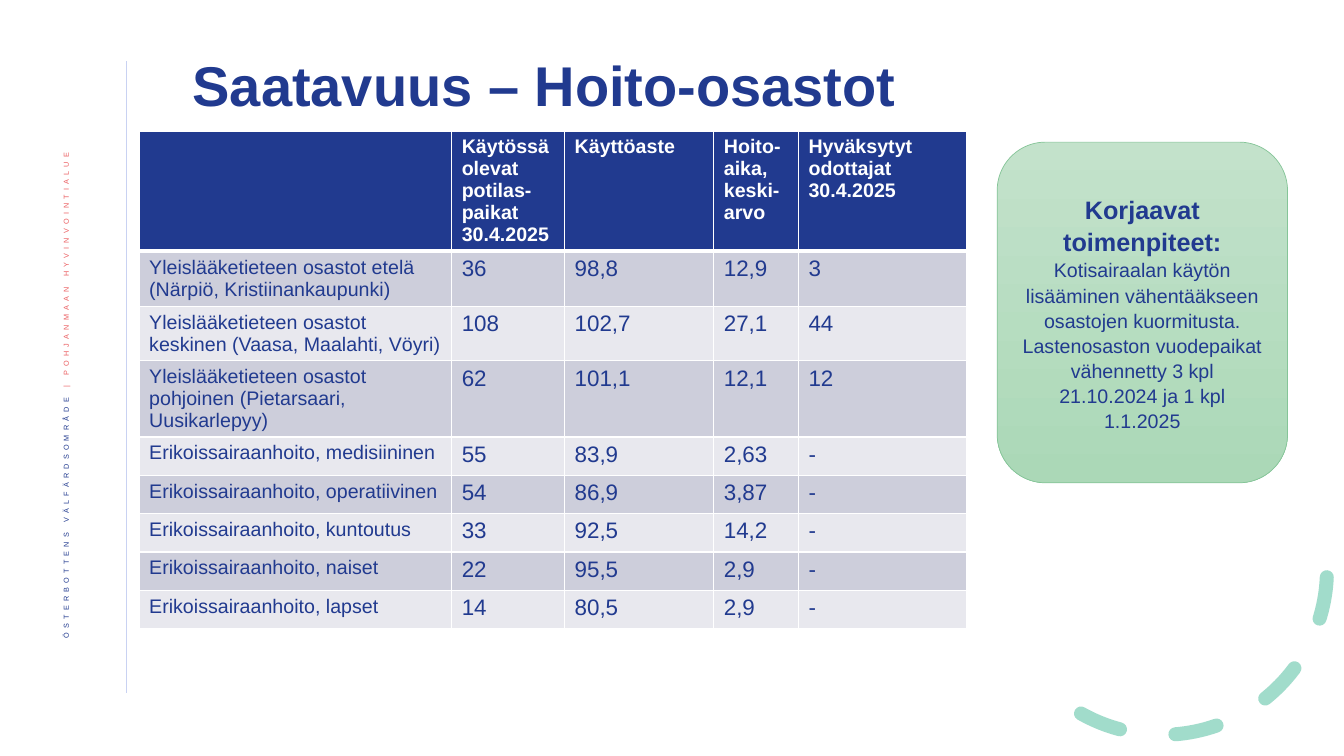
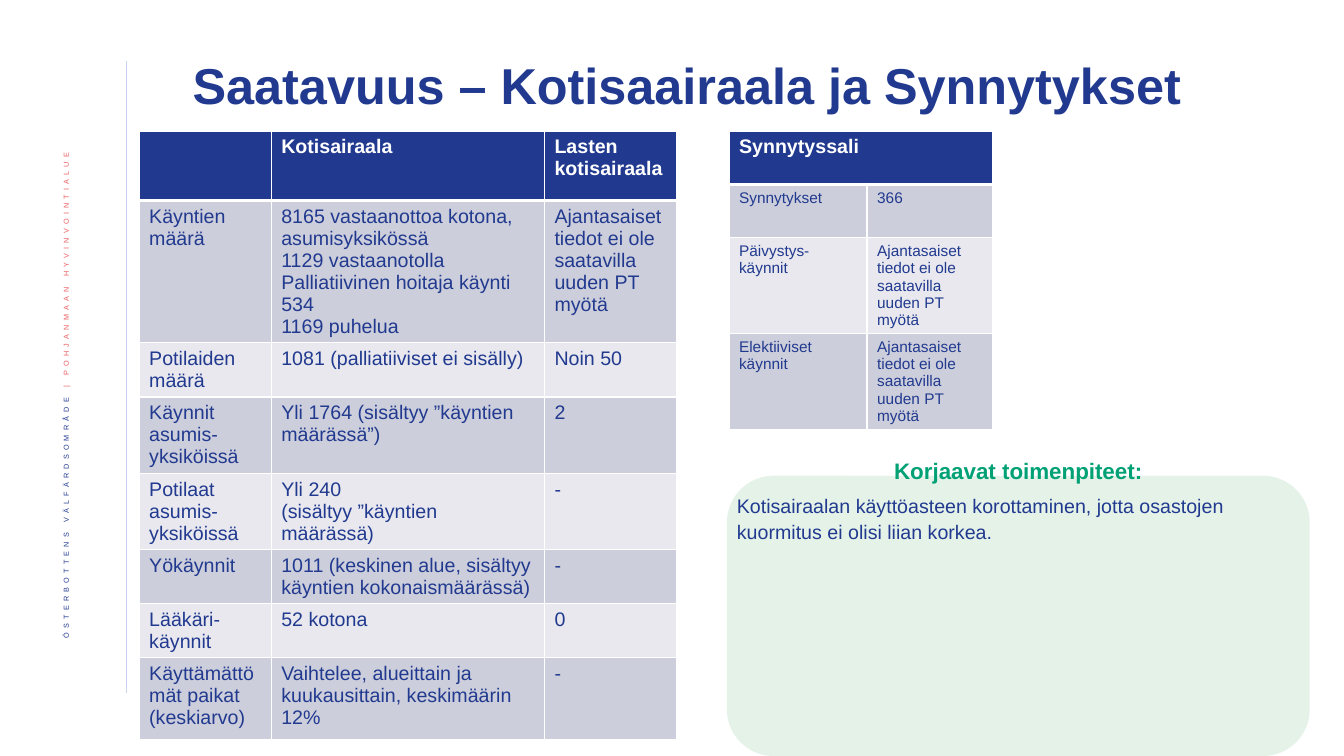
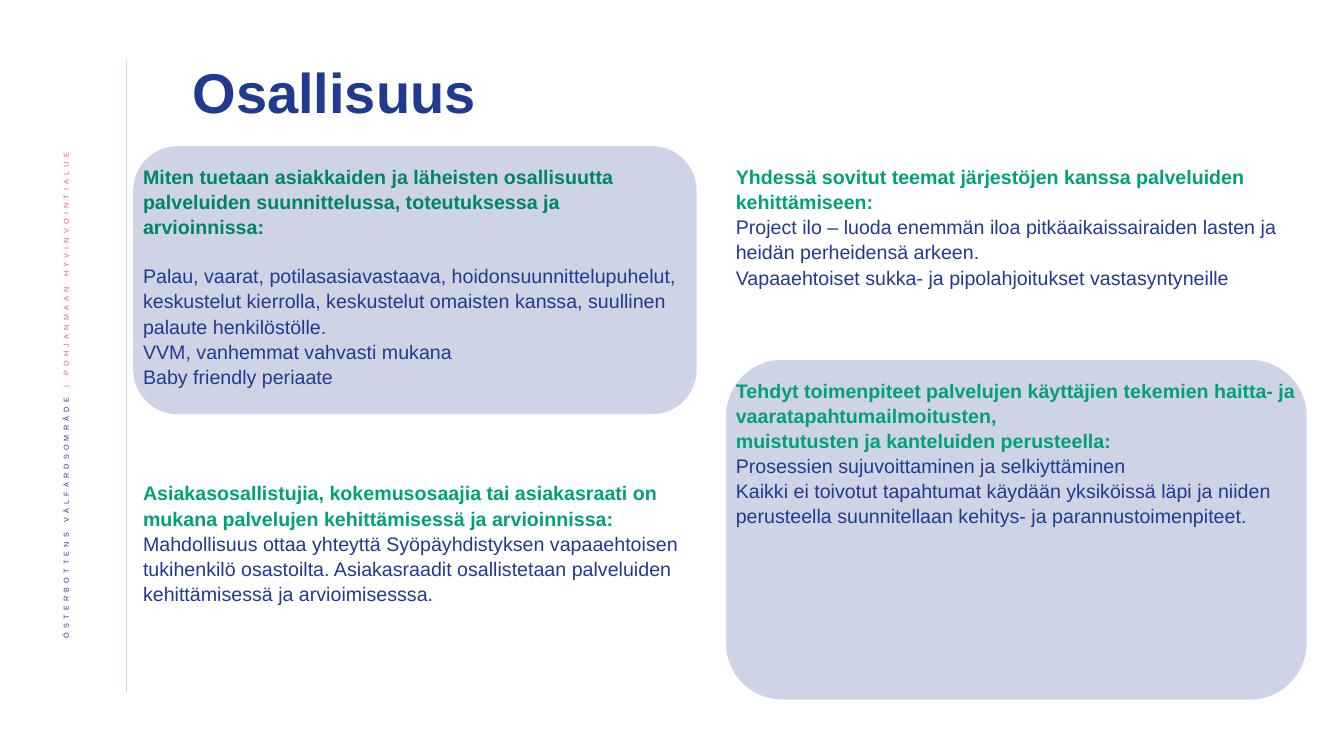
"""Build three slides on care availability and client participation."""
from lxml import etree
from pptx import Presentation
from pptx.dml.color import RGBColor
from pptx.enum.dml import MSO_LINE
from pptx.enum.shapes import MSO_CONNECTOR, MSO_SHAPE
from pptx.enum.text import MSO_ANCHOR, MSO_AUTO_SIZE, PP_ALIGN
from pptx.oxml.ns import qn
from pptx.util import Inches, Pt

STRAIGHT = MSO_CONNECTOR.STRAIGHT
ROUNDED = MSO_SHAPE.ROUNDED_RECTANGLE
ARC = MSO_SHAPE.ARC
DASH = MSO_LINE.DASH
MIDDLE = MSO_ANCHOR.MIDDLE
NO_FIT = MSO_AUTO_SIZE.NONE
LEFT, CENTER, RIGHT = PP_ALIGN.LEFT, PP_ALIGN.CENTER, PP_ALIGN.RIGHT

FONT = "Arial"
TITLE_ONLY = 5
COLORS = {
    "navy": "213A8F", "white": "FFFFFF", "rule": "C9D2F2", "coral": "EB5C5F",
    "green": "00A174", "deep_green": "008464", "leaf": "85C598",
    "leaf_top": "C3E2CB", "leaf_bottom": "ABD8B7",
    "odd_row": "CDCEDB", "even_row": "E8E8EE",
}


def color(name):
    return RGBColor.from_string(COLORS[name])


def set_alpha(parent, percent):
    tint = next(parent.iter(qn("a:srgbClr")))
    etree.SubElement(tint, qn("a:alpha")).set("val", str(percent * 1000))


def style(para, size, name, bold=False, align=LEFT, spacing=1.07):
    para.font.name = FONT
    para.font.size = Pt(size)
    para.font.bold = bold
    para.font.color.rgb = color(name)
    para.alignment = align
    para.line_spacing = spacing


class Slides:
    """Hold the shared style and the current slide."""

    def __init__(self):
        self.deck = Presentation()
        self.deck.slide_width = Inches(13.33)
        self.deck.slide_height = Inches(7.5)
        self.page = None

    def start(self, title, width, height=0.85, size=40):
        layout = self.deck.slide_layouts[TITLE_ONLY]
        self.page = self.deck.slides.add_slide(layout)
        self.side_band()
        box = self.page.shapes.title
        box.left, box.top = Inches(1.81), Inches(0.45)
        box.width, box.height = Inches(width), Inches(height)
        frame = box.text_frame
        frame.text = title
        frame.word_wrap = True
        frame.auto_size = NO_FIT
        frame.vertical_anchor = MIDDLE
        style(frame.paragraphs[0], size, "navy", True, spacing=0.9)

    def side_band(self):
        rule = self.page.shapes.add_connector(
            STRAIGHT, Inches(1.25), Inches(0.61), Inches(1.25), Inches(6.88))
        rule.line.color.rgb = color("rule")
        rule.line.width = Pt(0.5)
        etree.SubElement(rule._element.spPr, qn("a:effectLst"))
        box = self.page.shapes.add_textbox(
            Inches(0.42), Inches(1.42), Inches(0.52), Inches(5.73))
        frame = box.text_frame
        frame.word_wrap = True
        frame.vertical_anchor = MIDDLE
        frame._txBody.bodyPr.set("vert", "vert270")
        para = frame.paragraphs[0]
        style(para, 9, "navy", align=RIGHT, spacing=0.9)
        for text, name in (("ÖSTERBOTTENS VÄLFÄRDSOMRÅDE ", "navy"),
                           ("| POHJANMAAN HYVINVOINTIALUE", "coral")):
            span = para.add_run()
            span.text = text
            span.font.color.rgb = color(name)
            props = span._r.get_or_add_rPr()
            props.set("baseline", "30000")
            props.set("spc", "300")

    def dashed_arc(self):
        arc = self.page.shapes.add_shape(
            ARC, Inches(9.89), Inches(4.02), Inches(3.27), Inches(3.27))
        arc.shadow.inherit = False
        arc.adjustments[0], arc.adjustments[1] = 158.17, 17.81
        arc.rotation = 98.9
        arc.fill.background()
        arc.line.color.rgb = color("green")
        arc.line.width = Pt(10)
        arc.line.dash_style = DASH
        outline = arc.line._get_or_add_ln()
        outline.set("cap", "rnd")
        set_alpha(outline, 36)

    def panel(self, left, top, width, height, name=None):
        box = self.page.shapes.add_shape(
            ROUNDED, Inches(left), Inches(top), Inches(width), Inches(height))
        box.shadow.inherit = False
        if name:
            box.fill.solid()
            box.fill.fore_color.rgb = color(name)
            set_alpha(box._element.spPr, 22)
            box.line.fill.background()
        else:
            box.fill.gradient()
            box.fill.gradient_angle = 270
            for stop, shade in zip(box.fill.gradient_stops,
                                   ("leaf_top", "leaf_bottom")):
                stop.color.rgb = color(shade)
            box.line.color.rgb = color("leaf")
            box.line.width = Pt(0.5)
        return box

    def text(self, left, top, width, height, heads, lines, **options):
        box = self.page.shapes.add_textbox(
            Inches(left), Inches(top), Inches(width), Inches(height))
        self.fill_text(box.text_frame, heads, lines, **options)

    def fill_text(self, frame, heads, lines, head_color="green", head_size=14,
                  head_align=LEFT, align=LEFT, gap=0):
        frame.word_wrap = True
        frame.text = "\n".join(heads + lines)
        paras = frame.paragraphs
        for para in paras[:len(heads)]:
            style(para, head_size, head_color, True, head_align)
        for para in paras[len(heads):]:
            style(para, 14, "navy", align=align)
        if gap:
            paras[len(heads)].space_before = Pt(gap)

    def table(self, left, widths, heights, rows, label_size=14, value_size=14):
        frame = self.page.shapes.add_table(
            len(rows), len(widths), Inches(left), Inches(1.3),
            Inches(sum(widths)), Inches(sum(heights)))
        table = frame.table
        for column, width in zip(table.columns, widths):
            column.width = Inches(width)
        for row, height in zip(table.rows, heights):
            row.height = Inches(height)
        for r, values in enumerate(rows):
            for c, value in enumerate(values):
                cell = table.cell(r, c)
                cell.text = value
                size = value_size if c else label_size
                for para in cell.text_frame.paragraphs:
                    if r == 0:
                        style(para, 14, "white", True, spacing=1.0)
                    else:
                        style(para, size, "navy", spacing=1.0)
                self.paint_cell(cell, r)
        return table

    def paint_cell(self, cell, r):
        cell.fill.solid()
        name = "navy" if r == 0 else ("odd_row" if r % 2 else "even_row")
        cell.fill.fore_color.rgb = color(name)
        props = cell._tc.get_or_add_tcPr()
        for place, side in enumerate(("lnL", "lnR", "lnT", "lnB")):
            thick = (r, side) in ((0, "lnB"), (1, "lnT"))
            border = etree.Element(qn("a:" + side))
            border.set("w", str(Pt(3 if thick else 1)))
            fill = etree.SubElement(border, qn("a:solidFill"))
            etree.SubElement(fill, qn("a:srgbClr")).set("val", COLORS["white"])
            props.insert(place, border)


def wards(slides):
    slides.start("Saatavuus – Hoito-osastot", 10.2)
    slides.dashed_arc()
    slides.table(1.38, [3.1, 1.12, 1.48, 0.84, 1.67],
                 [0.98, 0.55, 0.31, 0.27] + [0.38] * 5, [
        ["", "Käytössä olevat potilas-paikat 30.4.2025", "Käyttöaste",
         "Hoito-aika, keski-arvo", "Hyväksytyt odottajat 30.4.2025"],
        ["Yleislääketieteen osastot etelä (Närpiö, Kristiinankaupunki)",
         "36", "98,8", "12,9", "3"],
        ["Yleislääketieteen osastot keskinen (Vaasa, Maalahti, Vöyri)",
         "108", "102,7", "27,1", "44"],
        ["Yleislääketieteen osastot pohjoinen (Pietarsaari, Uusikarlepyy)",
         "62", "101,1", "12,1", "12"],
        ["Erikoissairaanhoito, medisiininen", "55", "83,9", "2,63", "-"],
        ["Erikoissairaanhoito, operatiivinen", "54", "86,9", "3,87", "-"],
        ["Erikoissairaanhoito, kuntoutus", "33", "92,5", "14,2", "-"],
        ["Erikoissairaanhoito, naiset", "22", "95,5", "2,9", "-"],
        ["Erikoissairaanhoito, lapset", "14", "80,5", "2,9", "-"],
    ], value_size=16)
    box = slides.panel(9.89, 1.41, 2.88, 3.38)
    box.text_frame.vertical_anchor = MIDDLE
    slides.fill_text(box.text_frame, ["Korjaavat toimenpiteet:"], [
        "Kotisairaalan käytön lisääminen vähentääkseen osastojen kuormitusta.",
        "Lastenosaston vuodepaikat vähennetty 3 kpl 21.10.2024 ja 1 kpl "
        "1.1.2025",
    ], head_color="navy", head_size=18, head_align=CENTER, align=CENTER)


def home_care(slides):
    no_data = "Ajantasaiset tiedot ei ole saatavilla uuden PT myötä"
    slides.start("Saatavuus – Kotisaairaala ja Synnytykset", 10.98, size=36)
    slides.table(1.38, [1.31, 2.71, 1.31],
                 [0.69, 0.9, 0.49, 0.7, 0.69, 0.49, 0.49, 0.81], [
        ["", "Kotisairaala", "Lasten kotisairaala"],
        ["Käyntien määrä",
         "8165 vastaanottoa kotona, asumisyksikössä\n1129 vastaanotolla\n"
         "Palliatiivinen hoitaja käynti 534\n1169 puhelua", no_data],
        ["Potilaiden määrä", "1081 (palliatiiviset ei sisälly)", "Noin 50"],
        ["Käynnit asumis-yksiköissä",
         "Yli 1764 (sisältyy ”käyntien määrässä”)", "2"],
        ["Potilaat asumis-yksiköissä",
         "Yli 240\n(sisältyy ”käyntien määrässä)", "-"],
        ["Yökäynnit",
         "1011 (keskinen alue, sisältyy käyntien kokonaismäärässä)", "-"],
        ["Lääkäri-käynnit", "52 kotona", "0"],
        ["Käyttämättömät paikat (keskiarvo)",
         "Vaihtelee, alueittain ja kuukausittain, keskimäärin 12%", "-"],
    ])
    births = slides.table(7.23, [1.37, 1.25], [0.53] * 4, [
        ["Synnytyssali", ""],
        ["Synnytykset", "366"],
        ["Päivystys-käynnit", no_data],
        ["Elektiiviset käynnit", no_data],
    ], label_size=11, value_size=11)
    births.cell(0, 0).merge(births.cell(0, 1))
    slides.panel(7.21, 4.72, 5.78, 2.78, "leaf")
    slides.text(7.21, 4.47, 5.78, 1.7, ["Korjaavat toimenpiteet:"], [
        "Kotisairaalan käyttöasteen korottaminen, jotta osastojen kuormitus "
        "ei olisi liian korkea.",
    ], head_size=16, head_align=CENTER, gap=6)


def participation(slides):
    left, left_width, right, right_width = 1.32, 5.59, 7.2, 5.76
    slides.start("Osallisuus", 9.98, 0.99)
    slides.panel(left, 1.45, left_width, 2.66, "navy")
    slides.text(left, 1.57, left_width, 1.99, [
        "Miten tuetaan asiakkaiden ja läheisten osallisuutta palveluiden "
        "suunnittelussa, toteutuksessa ja arvioinnissa:",
    ], [
        "Palau, vaarat, potilasasiavastaava, hoidonsuunnittelupuhelut, "
        "keskustelut kierrolla, keskustelut omaisten kanssa, suullinen "
        "palaute henkilöstölle.",
        "VVM, vanhemmat vahvasti mukana",
        "Baby friendly periaate",
    ], head_color="deep_green", gap=17)
    slides.text(right, 1.57, right_width, 1.28, [
        "Yhdessä sovitut teemat järjestöjen kanssa palveluiden "
        "kehittämiseen:",
    ], [
        "Project ilo – luoda enemmän iloa pitkäaikaissairaiden lasten ja "
        "heidän perheidensä arkeen.",
        "Vapaaehtoiset sukka- ja pipolahjoitukset vastasyntyneille",
    ])
    slides.text(left, 4.71, left_width, 1.51, [
        "Asiakasosallistujia, kokemusosaajia tai asiakasraati on mukana "
        "palvelujen kehittämisessä ja arvioinnissa:",
    ], [
        "Mahdollisuus ottaa yhteyttä Syöpäyhdistyksen vapaaehtoisen "
        "tukihenkilö osastoilta. Asiakasraadit osallistetaan palveluiden "
        "kehittämisessä ja arvioimisesssa.",
    ])
    slides.panel(right, 3.57, right_width, 3.37, "navy")
    slides.text(right, 3.69, right_width, 1.75, [
        "Tehdyt toimenpiteet palvelujen käyttäjien tekemien haitta- ja "
        "vaaratapahtumailmoitusten,",
        "muistutusten ja kanteluiden perusteella:",
    ], [
        "Prosessien sujuvoittaminen ja selkiyttäminen",
        "Kaikki ei toivotut tapahtumat käydään yksiköissä läpi ja niiden "
        "perusteella suunnitellaan kehitys- ja parannustoimenpiteet.",
    ])


def main():
    slides = Slides()
    wards(slides)
    home_care(slides)
    participation(slides)
    slides.deck.save("out.pptx")


if __name__ == "__main__":
    main()
